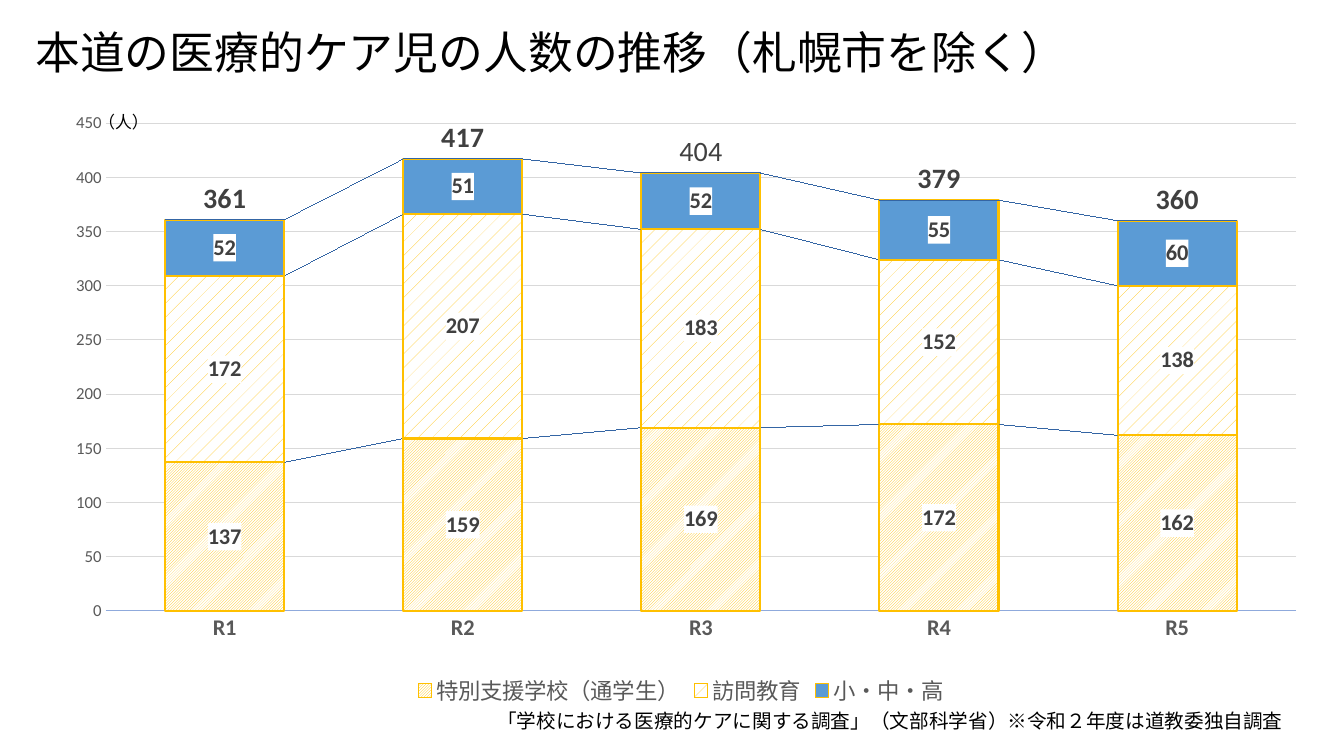
from lxml import etree
from pptx import Presentation
from pptx import util as u
from pptx.chart.data import CategoryChartData
from pptx.dml.color import RGBColor
from pptx.enum import chart as c, dml, text
from pptx.oxml import parse_xml
from pptx.oxml.ns import nsdecls, qn

TITLE = "本道の医療的ケア児の人数の推移（札幌市を除く）"
SOURCE_NOTE = "「学校における医療的ケアに関する調査」（文部科学省）※令和２年度は道教委独自調査"
UNIT = "（人）"
YEARS = ["R1", "R2", "R3", "R4", "R5"]
PUPILS = {
    "特別支援学校（通学生）": [137, 159, 169, 172, 162],
    "訪問教育": [172, 207, 183, 152, 138],
    "小・中・高": [52, 51, 52, 55, 60],
}
LIGHT_TOTAL_YEAR = "R3"
PATTERNS = [dml.MSO_PATTERN.DARK_UPWARD_DIAGONAL, dml.MSO_PATTERN.PERCENT_5, None]
PLOT_AREA = {"x": 0.043, "y": 0.027, "w": 0.945, "h": 0.808}

# left, top, width, height in points
TITLE_BOX = (18, 6.5, 779, 65.5)
CHART_BOX = (36.7, 76.3, 900, 431.3)
UNIT_BOX = (47.5, 76.3, 81.4, 21.6)
NOTE_BOX = (187.2, 502.6, 736.6, 24.5)

THEME = {
    "font": "Calibri", "title_font": "Noto Sans CJK JP",
    "black": "000000", "white": "FFFFFF", "axis": "595959", "label": "404040",
    "grid": "D9D9D9", "axis_line": "8FAADC", "series_line": "2F5597",
    "gold": "FFC000", "blue": "5B9BD5",
    "title": 32, "total": 20, "body": 16, "note": 14, "small": 12,
}


def color(name):
    return RGBColor.from_string(THEME[name])


def style_font(font, size, color_name, bold=False, name="font"):
    values = {"name": THEME[name], "size": u.Pt(THEME[size]), "bold": bold}
    for attribute, value in values.items():
        setattr(font, attribute, value)
    font.color.rgb = color(color_name)


def place(shape, box):
    for attribute, value in zip(("left", "top", "width", "height"), box):
        setattr(shape, attribute, u.Pt(value))


def add_text(slide, box, words, size, alignment):
    shape = slide.shapes.add_textbox(*map(u.Pt, box))
    shape.text_frame.word_wrap = True
    paragraph = shape.text_frame.paragraphs[0]
    paragraph.text = words
    paragraph.alignment = alignment
    style_font(paragraph.runs[0].font, size, "black")


def style_line(line, color_name, width):
    line.color.rgb = color(color_name)
    line.width = u.Pt(width)


def show_values(series, size, position):
    labels = series.data_labels
    labels.show_value = True
    labels.position = position
    style_font(labels.font, size, "label", bold=True)
    return labels


def move_totals_to_line(chart):
    """Turn the last bar series into a line series on the same axes."""
    bars = chart.plots[0]._element
    totals = bars.findall(qn("c:ser"))[-1]
    for element in totals.findall(qn("c:invertIfNegative")):
        totals.remove(element)
    line_chart = parse_xml(
        f'<c:lineChart {nsdecls("c")}><c:grouping val="standard"/>'
        '<c:varyColors val="0"/><c:marker val="1"/></c:lineChart>')
    line_chart.insert(2, totals)
    for axis_id in bars.findall(qn("c:axId")):
        etree.SubElement(line_chart, qn("c:axId")).set("val", axis_id.get("val"))
    bars.addnext(line_chart)


def add_series_lines(bars):
    bars._element.find(qn("c:overlap")).addnext(parse_xml(
        f'<c:serLines {nsdecls("c", "a")}><c:spPr><a:ln w="9525"><a:solidFill>'
        f'<a:srgbClr val="{THEME["series_line"]}"/></a:solidFill></a:ln></c:spPr></c:serLines>'))


def set_plot_area(chart):
    plot_area = chart._chartSpace.chart.plotArea
    for layout in plot_area.findall(qn("c:layout")):
        plot_area.remove(layout)
    modes = '<c:xMode val="edge"/><c:yMode val="edge"/>'
    sizes = "".join(f'<c:{key} val="{value}"/>' for key, value in PLOT_AREA.items())
    plot_area.insert(0, parse_xml(
        f'<c:layout {nsdecls("c")}><c:manualLayout><c:layoutTarget val="inner"/>'
        f'{modes}{sizes}</c:manualLayout></c:layout>'))


def style_bars(bars):
    bars.gap_width = 100
    bars.overlap = 100
    bars.vary_by_categories = False
    add_series_lines(bars)
    for series, pattern in zip(bars.series, PATTERNS):
        fill = series.format.fill
        if pattern is None:
            fill.solid()
            fill.fore_color.rgb = color("blue")
        else:
            fill.patterned()
            fill.pattern = pattern
            fill.fore_color.rgb = color("gold")
            fill.back_color.rgb = color("white")
        style_line(series.format.line, "gold", 1.5)
        labels = show_values(series, "body", c.XL_LABEL_POSITION.CENTER)
        labels._element.find(qn("c:txPr")).addprevious(parse_xml(
            f'<c:spPr {nsdecls("c", "a")}><a:solidFill>'
            f'<a:srgbClr val="{THEME["white"]}"/></a:solidFill></c:spPr>'))


def style_totals(series):
    series.smooth = False
    series.format.line.fill.background()
    series.marker.style = c.XL_MARKER_STYLE.NONE
    show_values(series, "total", c.XL_LABEL_POSITION.ABOVE)
    label = series.points[YEARS.index(LIGHT_TOTAL_YEAR)].data_label
    style_font(label.font, "total", "label")
    label.position = c.XL_LABEL_POSITION.ABOVE


def style_axes(chart):
    years, counts = chart.category_axis, chart.value_axis
    for axis, size, bold in ((years, "body", True), (counts, "small", False)):
        axis.major_tick_mark = axis.minor_tick_mark = c.XL_TICK_MARK.NONE
        style_font(axis.tick_labels.font, size, "axis", bold)
    style_line(years.format.line, "axis_line", 0.75)
    counts.format.line.fill.background()
    for attribute, value in {"minimum_scale": 0, "maximum_scale": 450, "major_unit": 50}.items():
        setattr(counts, attribute, value)
    style_line(counts.major_gridlines.format.line, "grid", 0.75)


def add_legend(chart):
    chart.has_legend = True
    legend = chart.legend
    legend.position = c.XL_LEGEND_POSITION.BOTTOM
    legend.include_in_layout = False
    style_font(legend.font, "body", "axis")
    legend._element.find(qn("c:legendPos")).addnext(parse_xml(
        f'<c:legendEntry {nsdecls("c")}><c:idx val="{len(PUPILS)}"/>'
        '<c:delete val="1"/></c:legendEntry>'))


def add_pupil_chart(slide):
    data = CategoryChartData()
    data.categories = YEARS
    for name, values in PUPILS.items():
        data.add_series(name, values)
    data.add_series("", [sum(counts) for counts in zip(*PUPILS.values())])
    chart = slide.shapes.add_chart(
        c.XL_CHART_TYPE.COLUMN_STACKED, *map(u.Pt, CHART_BOX), data).chart
    chart.has_title = False
    style_font(chart.font, "small", "black")
    move_totals_to_line(chart)
    bars, line = chart.plots
    style_bars(bars)
    style_totals(line.series[0])
    style_axes(chart)
    set_plot_area(chart)
    add_legend(chart)


def main():
    presentation = Presentation()
    presentation.slide_width, presentation.slide_height = u.Pt(960), u.Pt(540)
    slide = presentation.slides.add_slide(presentation.slide_layouts[5])
    title = slide.shapes.title
    place(title, TITLE_BOX)
    frame = title.text_frame
    frame.text = TITLE
    frame.auto_size = text.MSO_AUTO_SIZE.NONE
    frame.vertical_anchor = text.MSO_ANCHOR.MIDDLE
    paragraph = frame.paragraphs[0]
    paragraph.alignment = text.PP_ALIGN.LEFT
    paragraph.line_spacing = 0.9
    style_font(paragraph.runs[0].font, "title", "black", name="title_font")
    add_text(slide, NOTE_BOX, SOURCE_NOTE, "note", text.PP_ALIGN.RIGHT)
    add_pupil_chart(slide)
    add_text(slide, UNIT_BOX, UNIT, "small", text.PP_ALIGN.CENTER)
    presentation.save("out.pptx")


if __name__ == "__main__":
    main()
